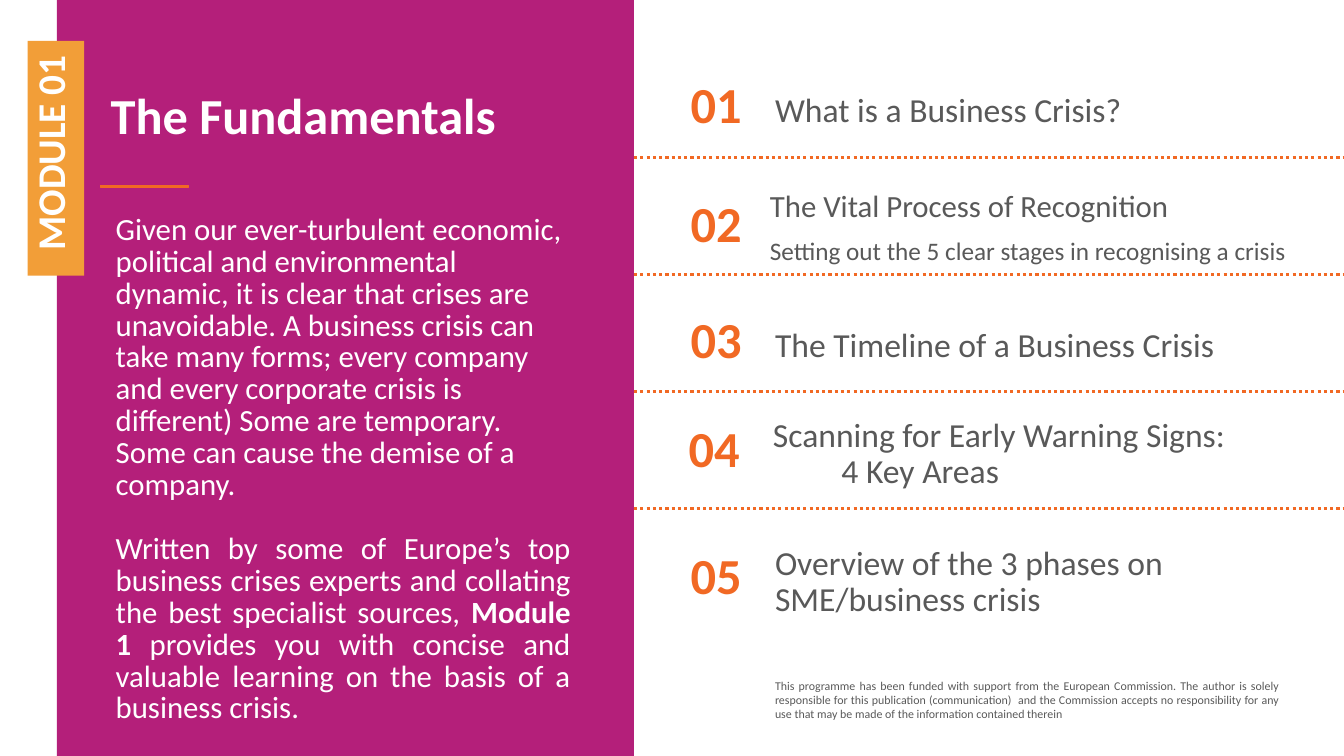
"""Build the module overview slide with its five numbered topics."""
import dataclasses

import pptx
import pptx.dml.color
import pptx.enum.dml
import pptx.enum.shapes
import pptx.enum.text
import pptx.oxml
import pptx.util

WIDTH, HEIGHT = pptx.util.Inches(13.33), pptx.util.Inches(7.5)
COLUMNS, ROWS = 40, 30
PANEL_LEFT, PANEL_RIGHT = 1.69, 18.87
ALIGN = pptx.enum.text.PP_ALIGN
ANCHOR = pptx.enum.text.MSO_ANCHOR
RECTANGLE = pptx.enum.shapes.MSO_SHAPE.RECTANGLE


@dataclasses.dataclass(frozen=True)
class Theme:
    """Colours, typeface and type sizes of the slide."""
    panel: str = "B41F7A"
    tag: str = "F29E38"
    accent: str = "F16924"
    light: str = "FFFFFF"
    grey: str = "595959"
    font: str = "Calibri"
    heading: float = 36
    label: float = 28
    topic: float = 24
    body: float = 22
    detail: float = 18
    footer: float = 8.5


@dataclasses.dataclass(frozen=True)
class Topic:
    """Text and grid position of one numbered topic."""
    paragraphs: list
    number_top: float
    top: float
    number_left: float = 19.95
    left: float = 22.77
    width: float = 15.6
    frame: dict = dataclasses.field(default_factory=dict)


THEME = Theme()
TOPICS = [
    Topic([{"runs": [("What is a Business Crisis?", {})]}], 2.88, 2.64),
    Topic([{"runs": [("The Vital Process of Recognition", {"size": THEME.body})]},
           {"runs": [("Setting out the 5 clear stages in recognising a crisis",
                      {"size": THEME.detail})],
            "format": {"space_before": pptx.util.Pt(10)}}],
          7.6, 8.2, left=22.62, width=17.22,
          frame={"margin_bottom": pptx.util.Inches(0.52)}),
    Topic([{"runs": [("The Timeline of a Business Crisis", {})]}], 12.2, 11.96),
    Topic([{"runs": [("Scanning for Early Warning Signs:", {}), ("\n", {}),
                     ("4 Key Areas", {})],
            "indent": (0.68, -0.68)}],
          16.52, 16.24, number_left=19.89, left=22.71, width=15.63),
    Topic([{"runs": [("Overview of the 3 phases on SME/business crisis", {})]}],
          21.56, 21.32),
]
INTRODUCTION = (
    "Given our ever-turbulent economic, political and environmental dynamic, it is "
    "clear that crises are unavoidable. A business crisis can take many forms; every "
    "company and every corporate crisis is different) Some are temporary. Some can "
    "cause the demise of a company.")
AUTHORS = [
    ("Written by some of Europe’s top business crises experts and collating the best "
     "specialist sources, ", {}),
    ("Module 1 ", {"bold": True}),
    ("provides you with concise and valuable learning on the basis of a business "
     "crisis.", {}),
]
FUNDING = (
    "This programme has been funded with support from the European Commission. The "
    "author is solely responsible for this publication (communication)  and the "
    "Commission accepts no responsibility for any use that may be made of the "
    "information contained therein")


def across(columns):
    """Convert grid columns to a length."""
    return round(WIDTH * columns / COLUMNS)


def down(rows):
    """Convert grid rows to a length."""
    return round(HEIGHT * rows / ROWS)


def place(left, top, width, height):
    """Convert a grid rectangle to lengths."""
    return across(left), down(top), across(width), down(height)


def apply(target, values):
    """Set every attribute named in a dict of format values."""
    for name, value in values.items():
        setattr(target, name, value)


def rgb(colour):
    """Turn a hex string into a colour."""
    return pptx.dml.color.RGBColor.from_string(colour)


def style_run(run, size, colour, bold=False):
    """Give a run its font, size, weight and colour."""
    apply(run.font, {"name": THEME.font, "size": pptx.util.Pt(size), "bold": bold})
    run.font.color.rgb = rgb(colour)


def fill_text(shape, paragraphs, style, shared, frame_format):
    """Write paragraphs of runs into a shape."""
    frame = shape.text_frame
    apply(frame, {"word_wrap": True, **frame_format})
    for index, content in enumerate(paragraphs):
        paragraph = frame.add_paragraph() if index else frame.paragraphs[0]
        apply(paragraph, {**shared, **content.get("format", {})})
        if "indent" in content:
            properties = paragraph._p.get_or_add_pPr()
            for name, inches in zip(("marL", "indent"), content["indent"]):
                properties.set(name, str(pptx.util.Inches(inches)))
        for text, changes in content["runs"]:
            if text == "\n":
                paragraph.add_line_break()
                continue
            run = paragraph.add_run()
            run.text = text
            style_run(run, **{**style, **changes})


def add_text(slide, area, paragraphs, style, shared, frame_format=None):
    """Add a text box on the grid."""
    box = slide.shapes.add_textbox(*place(*area))
    fill_text(box, paragraphs, style, shared, frame_format or {})


def add_block(slide, area, colour, line_width=0):
    """Add a plain filled rectangle on the grid."""
    block = slide.shapes.add_shape(RECTANGLE, *place(*area))
    block.shadow.inherit = False
    block.fill.solid()
    block.fill.fore_color.rgb = rgb(colour)
    if line_width:
        block.line.color.rgb = rgb(colour)
        block.line.width = pptx.util.Pt(line_width)
    else:
        block.line.fill.background()
    return block


def add_separator(slide, row):
    """Add a dotted line from the panel to the slide's right edge."""
    line = slide.shapes.add_connector(
        pptx.enum.shapes.MSO_CONNECTOR.STRAIGHT,
        across(PANEL_RIGHT), down(row), across(COLUMNS), down(row))
    line.line.color.rgb = rgb(THEME.accent)
    apply(line.line, {"width": pptx.util.Pt(2.25),
                      "dash_style": pptx.enum.dml.MSO_LINE.ROUND_DOT})
    line._element.spPr.append(pptx.oxml.parse_xml(
        '<a:effectLst xmlns:a="http://schemas.openxmlformats.org/drawingml/2006/main"/>'))


def add_topic(slide, number, topic):
    """Add a topic's number and its text."""
    middle = {"vertical_anchor": ANCHOR.MIDDLE}
    add_text(slide, (topic.left, topic.top, topic.width, 3.6), topic.paragraphs,
             {"size": THEME.topic, "colour": THEME.grey},
             {"line_spacing": 0.9}, {**middle, **topic.frame})
    add_text(slide, (topic.number_left, topic.number_top, 2.73, 2.76),
             [{"runs": [(f"{number:02d}", {})]}],
             {"size": THEME.heading, "colour": THEME.accent, "bold": True},
             {"line_spacing": 0.9, "alignment": ALIGN.CENTER}, middle)


def add_panel(slide):
    """Add the coloured panel with its heading, text and module tag."""
    add_block(slide, (PANEL_LEFT, 0, PANEL_RIGHT - PANEL_LEFT, ROWS), THEME.panel)
    add_text(slide, (3, 3.4, 14.37, 3.6), [{"runs": [("The Fundamentals", {})]}],
             {"size": THEME.heading, "colour": THEME.light, "bold": True},
             {"line_spacing": 0.9})
    add_block(slide, (3, 7.36, 2.61, 0.08), THEME.accent, 1)
    spacing = pptx.util.Pt(22.8)
    add_text(slide, (3.15, 8.32, 14.13, 14.36),
             [{"runs": [(INTRODUCTION, {})]},
              {"runs": AUTHORS,
               "format": {"alignment": ALIGN.JUSTIFY, "space_before": spacing}}],
             {"size": THEME.body, "colour": THEME.light}, {"line_spacing": spacing})
    tag = add_block(slide, (-1.83, 5.16, 6.99, 2.24), THEME.tag)
    tag.rotation = 270
    fill_text(tag, [{"runs": [("MODULE 01", {})], "indent": (0.15, 0)}],
              {"size": THEME.label, "colour": THEME.light, "bold": True},
              {"line_spacing": pptx.util.Pt(24.4), "alignment": ALIGN.LEFT},
              {"vertical_anchor": ANCHOR.MIDDLE})


def main():
    """Build and save the presentation."""
    presentation = pptx.Presentation()
    apply(presentation, {"slide_width": WIDTH, "slide_height": HEIGHT})
    slide = presentation.slides.add_slide(presentation.slide_layouts[6])
    add_panel(slide)
    for number, topic in enumerate(TOPICS, 1):
        add_topic(slide, number, topic)
    for gap in range(len(TOPICS) - 1):
        add_separator(slide, 6.24 + 4.65 * gap)
    add_text(slide, (22.77, 26.72, 15.6, 2.12), [{"runs": [(FUNDING, {})]}],
             {"size": THEME.footer, "colour": THEME.grey},
             {"alignment": ALIGN.JUSTIFY})
    presentation.save("out.pptx")


if __name__ == "__main__":
    main()
